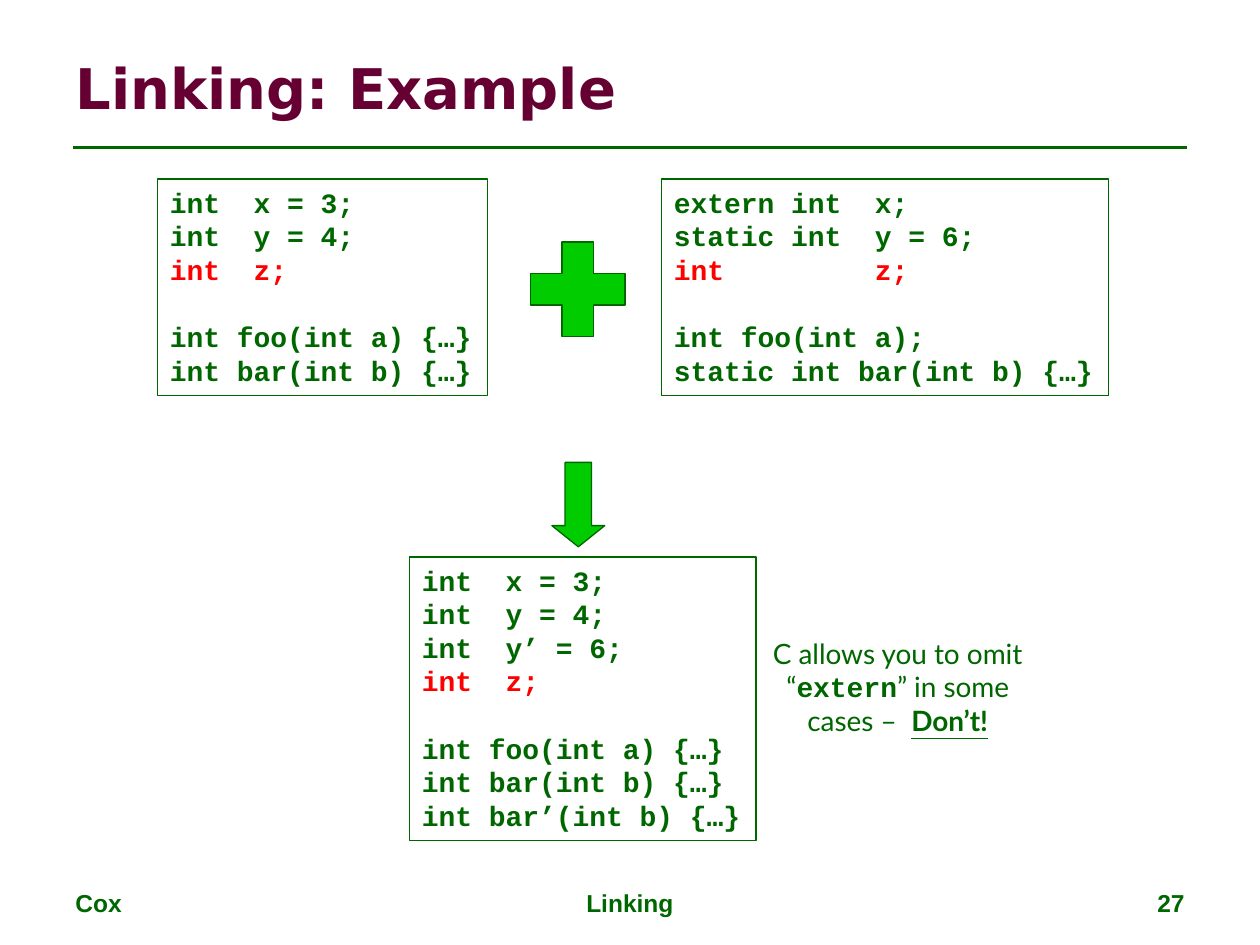
import pptx
import pptx.util
import pptx.dml.color
import pptx.enum.shapes
import pptx.enum.text
import pptx.oxml.ns
import lxml.etree

Inches, Pt = pptx.util.Inches, pptx.util.Pt
SHAPES = pptx.enum.shapes.MSO_SHAPE
ALIGN = pptx.enum.text.PP_ALIGN
ANCHOR = pptx.enum.text.MSO_ANCHOR
FIT = pptx.enum.text.MSO_AUTO_SIZE
COLORS = {"green": "006600", "bright": "00CC00", "red": "FF0000", "title": "660033"}
LINE_PITCH = Pt(19.2)


def rgb(name):
    return pptx.dml.color.RGBColor.from_string(COLORS[name])


def add_run(paragraph, text, size, font, color="green", bold=True, underline=None):
    run = paragraph.add_run()
    run.text = text
    run.font.size, run.font.name = Pt(size), font
    run.font.bold, run.font.underline = bold, underline
    run.font.color.rgb = rgb(color)


def add_outlined(slide, kind, left, top, width, height, fill=None):
    shape = slide.shapes.add_shape(
        kind, Inches(left), Inches(top), Inches(width), Inches(height))
    shape.shadow.inherit = False
    if fill:
        shape.fill.solid()
        shape.fill.fore_color.rgb = rgb(fill)
    else:
        shape.fill.background()
    shape.line.color.rgb = rgb("green")
    shape.line.width = Pt(0.75)
    return shape


def add_label(slide, left, top, width, height, runs, align=ALIGN.LEFT, anchor=ANCHOR.TOP):
    """Text box with one paragraph; each run is a tuple of add_run arguments."""
    frame = slide.shapes.add_textbox(
        Inches(left), Inches(top), Inches(width), Inches(height)).text_frame
    frame.word_wrap = True
    frame.vertical_anchor = anchor
    frame.paragraphs[0].alignment = align
    for run in runs:
        add_run(frame.paragraphs[0], *run)


def add_header(slide, left, top, width, height):
    add_label(slide, left, top, width, height,
              [("Linking: Example", 32, "DejaVu Sans", "title")], anchor=ANCHOR.MIDDLE)
    rule_y = Inches(top + height + 0.09)
    rule = slide.shapes.add_connector(
        pptx.enum.shapes.MSO_CONNECTOR.STRAIGHT,
        Inches(left + 0.08), rule_y, Inches(left + width - 0.08), rule_y)
    rule.line.color.rgb = rgb("green")
    rule.line.width = Pt(1.5)
    lxml.etree.SubElement(rule._element.spPr, pptx.oxml.ns.qn("a:effectLst"))


def add_footer(slide, left, top, width, height):
    side, middle = 2.33, 3.17
    parts = [("Cox", left, side, ALIGN.LEFT),
             ("Linking", left + (width - middle) / 2, middle, ALIGN.CENTER),
             ("27", left + width - side, side, ALIGN.RIGHT)]
    for text, x, part_width, align in parts:
        add_label(slide, x, top, part_width, height, [(text, 14, "Arial")], align)


def add_code(slide, left, top, width, height, variables, functions):
    """Code box: variables (the last one in red), a gap, then functions."""
    frame = add_outlined(slide, SHAPES.RECTANGLE, left, top, width, height).text_frame
    frame.word_wrap = False
    frame.auto_size = FIT.SHAPE_TO_FIT_TEXT
    frame.vertical_anchor = ANCHOR.TOP
    for index, code in enumerate(variables + functions):
        line = frame.paragraphs[0] if index == 0 else frame.add_paragraph()
        line.alignment = ALIGN.LEFT
        line.line_spacing = LINE_PITCH
        if index == len(variables):
            line.space_before = LINE_PITCH
        color = "red" if index == len(variables) - 1 else "green"
        add_run(line, code, 16, "Courier New", color)


def add_symbols(slide, left, top):
    """Plus sign between the sources, arrow down to the linked result."""
    plus = add_outlined(slide, SHAPES.CROSS, left, top, 0.75, 0.75, "bright")
    plus.adjustments[0] = 1 / 3
    arrow = add_outlined(slide, SHAPES.DOWN_ARROW, left + 0.17, top + 1.75,
                         0.42, 0.67, "bright")
    arrow.adjustments[0], arrow.adjustments[1] = 0.5, 0.4


def main():
    deck = pptx.Presentation()
    deck.slide_width, deck.slide_height = Inches(10), Inches(7.5)
    slide = deck.slides.add_slide(deck.slide_layouts[6])

    add_header(slide, 0.5, 0.3, 9, 0.78)
    add_footer(slide, 0.5, 7, 9, 0.35)

    # Two source files
    add_code(slide, 1.25, 1.42, 2.62, 1.72,
             ["int  x = 3;", "int  y = 4;", "int  z;"],
             ["int foo(int a) {…}", "int bar(int b) {…}"])
    add_code(slide, 5.25, 1.42, 3.55, 1.72,
             ["extern int  x;", "static int  y = 6;", "int         z;"],
             ["int foo(int a);", "static int bar(int b) {…}"])

    # Linked result
    add_code(slide, 3.25, 4.42, 2.75, 2.25,
             ["int  x = 3;", "int  y = 4;", "int  y’ = 6;", "int  z;"],
             ["int foo(int a) {…}", "int bar(int b) {…}", "int bar’(int b) {…}"])
    add_symbols(slide, 4.21, 1.92)

    # Advice beside the result
    add_label(slide, 6, 5, 2.25, 0.9,
              [("C allows you to omit “", 16, "Lato", "green", False),
               ("extern", 16, "Courier New"),
               ("” in some cases –  ", 16, "Lato", "green", False),
               ("Don’t!", 16, "Lato", "green", True, True)], ALIGN.CENTER)

    deck.save("out.pptx")


if __name__ == "__main__":
    main()
